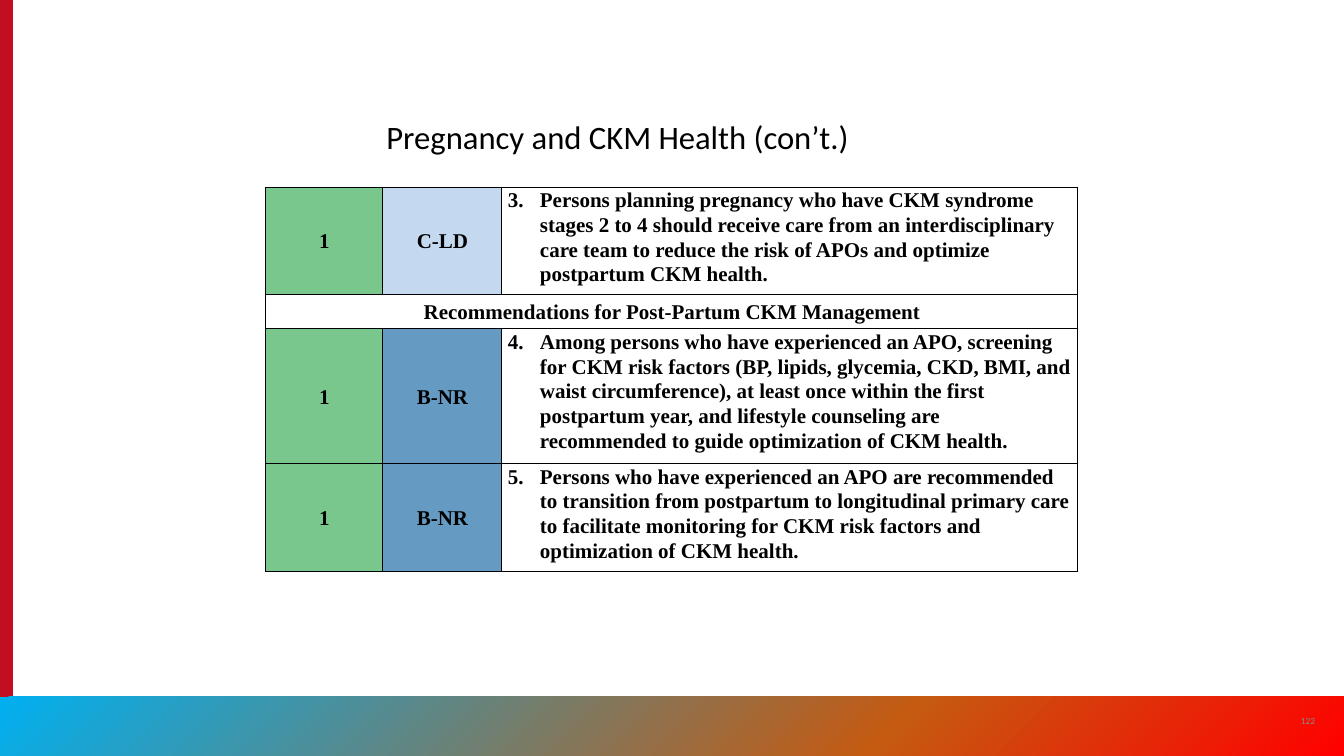
"""Build the slide on pregnancy and CKM health recommendations."""
from dataclasses import dataclass
from typing import Any

from lxml.etree import SubElement
from pptx import Presentation
from pptx.dml.color import RGBColor
from pptx.enum.shapes import MSO_SHAPE as Shape
from pptx.enum.text import MSO_ANCHOR as Anchor, MSO_AUTO_SIZE as AutoSize, PP_ALIGN as Align
from pptx.oxml.ns import qn
from pptx.util import Emu, Pt


@dataclass(frozen=True)
class Theme:
    heading: str = "Calibri"
    body: str = "Times New Roman"
    title_pt: int = 28
    table_pt: int = 18
    number_pt: int = 8
    border_pt: int = 1
    ink: str = "000000"
    grey: str = "8A8B8A"
    red: str = "C10E21"
    strong: str = "79C78D"
    levels: tuple[tuple[str, str], ...] = (("C-LD", "C4D9F0"), ("B-NR", "659BC2"))
    footer: tuple[tuple[int, str], ...] = ((0, "00B0F0"), (66, "C55A11"), (100, "FF0000"))


@dataclass(frozen=True)
class Box:
    left: int
    top: int
    width: int
    height: int

    def emu(self) -> tuple[Emu, ...]:
        return tuple(px(n) for n in (self.left, self.top, self.width, self.height))


@dataclass(frozen=True)
class Recommendation:
    number: int
    level: str
    text: str


THEME = Theme()
PX_PER_INCH = 84
SLIDE = Box(0, 0, 1344, 756)
SIDE_BAR = Box(0, 0, 13, 756)
FOOTER = Box(0, 697, 1344, 59)
PAGE_NUMBER = Box(1288, 701, 40, 40)
TITLE = Box(378, 112, 589, 48)
TABLE = Box(266, 187, 812, 330)
COLUMNS = (117, 119, 576)
ROWS = (87, 34, 122, 87)
INSET, HANGING = 6, 32
ENTRIES: tuple[Recommendation | str, ...] = (
    Recommendation(3, "C-LD", "Persons planning pregnancy who have CKM syndrome stages 2 to 4 "
                   "should receive care from an interdisciplinary care team to reduce the risk "
                   "of APOs and optimize postpartum CKM health."),
    "Recommendations for Post-Partum CKM Management",
    Recommendation(4, "B-NR", "Among persons who have experienced an APO, screening for CKM risk "
                   "factors (BP, lipids, glycemia, CKD, BMI, and waist circumference), at least "
                   "once within the first postpartum year, and lifestyle counseling are "
                   "recommended to guide optimization of CKM health."),
    Recommendation(5, "B-NR", "Persons who have experienced an APO are recommended to transition "
                   "from postpartum to longitudinal primary care to facilitate monitoring for "
                   "CKM risk factors and optimization of CKM health."),
)


def px(n: int) -> Emu:
    return Emu(round(n * 914400 / PX_PER_INCH))


def apply(target: Any, **values: Any) -> None:
    for name, value in values.items():
        setattr(target, name, value)


def write(tf: Any, text: str, face: str, size: int, color: str, align: Align,
          bold: bool = False) -> Any:
    p = tf.paragraphs[0]
    p.alignment = align
    r = p.add_run()
    r.text = text
    apply(r.font, name=face, size=Pt(size), bold=bold)
    r.font.color.rgb = RGBColor.from_string(color)
    return p


def add_bar(s: Any, box: Box) -> Any:
    sp = s.shapes.add_shape(Shape.RECTANGLE, *box.emu())
    sp.shadow.inherit = False
    sp.line.fill.background()
    return sp


def add_footer(s: Any) -> None:
    sp = add_bar(s, FOOTER)
    sp.fill.gradient()
    grad = sp._element.spPr.find(qn("a:gradFill"))
    for child in list(grad):
        grad.remove(child)
    stops = SubElement(grad, qn("a:gsLst"))
    for percent, color in THEME.footer:
        stop = SubElement(stops, qn("a:gs"), pos=str(percent * 1000))
        SubElement(stop, qn("a:srgbClr"), val=color)
    SubElement(grad, qn("a:lin"), ang=str(45 * 60000), scaled="0")


def add_title(s: Any) -> None:
    sp = s.shapes.title
    apply(sp, **dict(zip(("left", "top", "width", "height"), TITLE.emu())))
    tf = sp.text_frame
    apply(tf, word_wrap=True, auto_size=AutoSize.NONE, vertical_anchor=Anchor.MIDDLE)
    write(tf, "Pregnancy and CKM Health (con’t.)", THEME.heading, THEME.title_pt,
          THEME.ink, Align.LEFT)


def add_page_number(s: Any) -> None:
    tf = s.shapes.add_textbox(*PAGE_NUMBER.emu()).text_frame
    apply(tf, word_wrap=True, vertical_anchor=Anchor.MIDDLE)
    write(tf, "122", THEME.heading, THEME.number_pt, THEME.grey, Align.CENTER)


def style_cell(cell: Any) -> None:
    apply(cell, margin_left=px(INSET), margin_right=px(INSET), margin_top=0, margin_bottom=0,
          vertical_anchor=Anchor.MIDDLE)
    tc_pr = cell._tc.get_or_add_tcPr()
    for side in ("a:lnL", "a:lnR", "a:lnT", "a:lnB"):
        line = SubElement(tc_pr, qn(side), w=str(Pt(THEME.border_pt)))
        SubElement(SubElement(line, qn("a:solidFill")), qn("a:srgbClr"), val=THEME.ink)
    cell.fill.background()


def fill_cell(cell: Any, text: str, align: Align = Align.CENTER) -> Any:
    return write(cell.text_frame, text, THEME.body, THEME.table_pt, THEME.ink, align, True)


def fill_row(cells: list[Any], entry: Recommendation) -> None:
    colors = (THEME.strong, dict(THEME.levels)[entry.level])
    for cell, color in zip(cells, colors):
        cell.fill.solid()
        cell.fill.fore_color.rgb = RGBColor.from_string(color)
    cells[2].vertical_anchor = Anchor.TOP
    p_pr = cells[2].text_frame.paragraphs[0]._p.get_or_add_pPr()
    apply_indent = {"marL": px(HANGING), "indent": -px(HANGING)}
    for name, value in apply_indent.items():
        p_pr.set(name, str(value))
    SubElement(p_pr, qn("a:buAutoNum"), type="arabicPeriod", startAt=str(entry.number))
    texts = ("1", entry.level, entry.text)
    for cell, text, align in zip(cells, texts, (Align.CENTER, Align.CENTER, Align.LEFT)):
        apply(fill_cell(cell, text, align), line_spacing=1.07, space_after=Pt(8))


def add_recommendations(s: Any) -> None:
    table = s.shapes.add_table(len(ROWS), len(COLUMNS), *TABLE.emu()).table
    apply(table, first_row=False, horz_banding=False)
    for column, width in zip(table.columns, COLUMNS):
        column.width = px(width)
    for row, height, entry in zip(table.rows, ROWS, ENTRIES):
        row.height = px(height)
        cells = list(row.cells)
        for cell in cells:
            style_cell(cell)
        if isinstance(entry, Recommendation):
            fill_row(cells, entry)
        else:
            cells[0].merge(cells[-1])
            fill_cell(cells[0], entry)


def main() -> None:
    prs = Presentation()
    apply(prs, slide_width=px(SLIDE.width), slide_height=px(SLIDE.height))
    s = prs.slides.add_slide(prs.slide_layouts[5])
    side = add_bar(s, SIDE_BAR)
    side.fill.solid()
    side.fill.fore_color.rgb = RGBColor.from_string(THEME.red)
    add_footer(s)
    add_page_number(s)
    add_title(s)
    add_recommendations(s)
    prs.save("out.pptx")


if __name__ == "__main__":
    main()
